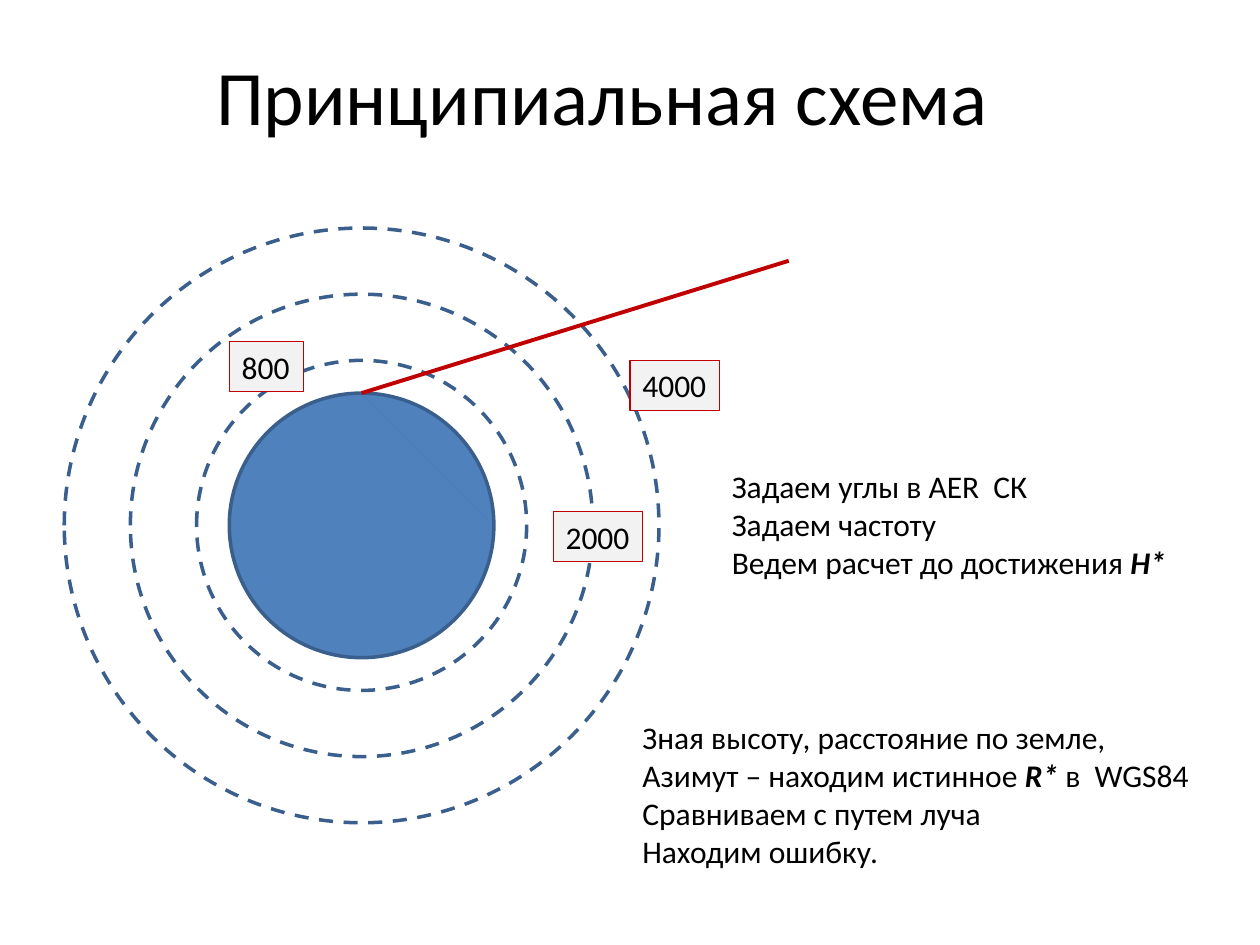
from dataclasses import dataclass

from lxml.etree import SubElement
from pptx import Presentation
from pptx.dml.color import RGBColor
from pptx.enum.dml import MSO_LINE
from pptx.enum.shapes import MSO_CONNECTOR, MSO_SHAPE
from pptx.enum.text import MSO_ANCHOR, MSO_AUTO_SIZE, PP_ALIGN
from pptx.oxml.ns import qn
from pptx.util import Inches, Pt

COLORS = {
    "text": "000000",
    "earth": "4F81BD",
    "orbit": "3A5F8C",
    "chord": "4B7EBC",
    "ray": "C00000",
    "label": "F2F2F2",
}
FONT = "Calibri"
CENTER_X, CENTER_Y = 2.87, 4.17
EARTH_RADIUS = 1.05
ORBIT_RADII = (1.31, 1.835, 2.36)


@dataclass
class HeightLabel:
    text: str
    left: float
    top: float
    width: float


@dataclass
class Ray:
    end_x: float
    end_y: float
    color: str
    weight: float


@dataclass
class Note:
    lines: list[str]
    left: float
    top: float
    width: float
    height: float


HEIGHT_LABELS = [
    HeightLabel("4000", 5, 2.86, 0.71),
    HeightLabel("2000", 4.39, 4.06, 0.71),
    HeightLabel("800", 1.82, 2.71, 0.59),
]
RAYS = [Ray(3.87, 4.12, "chord", 0.75), Ray(6.26, 2.07, "ray", 2.25)]
# Text between bars is bold italic
NOTES = [
    Note(["Задаем углы в AER  СК", "Задаем частоту",
          "Ведем расчет до достижения |H*|"], 5.71, 3.66, 3.69, 1.01),
    Note(["Зная высоту, расстояние по земле,",
          "Азимут – находим истинное |R*| в  WGS84",
          "Сравниваем с путем луча", "Находим ошибку."], 5, 5.65, 4.59, 1.31),
]


def rgb(name: str) -> RGBColor:
    return RGBColor.from_string(COLORS[name])


def write_text(frame, lines: list[str], *, size: float = 18, align=PP_ALIGN.LEFT,
               anchor=MSO_ANCHOR.TOP, wrap: bool = False,
               fit=MSO_AUTO_SIZE.SHAPE_TO_FIT_TEXT) -> None:
    frame.word_wrap = wrap
    frame.auto_size = fit
    frame.vertical_anchor = anchor
    for number, line in enumerate(lines):
        paragraph = frame.paragraphs[0] if number == 0 else frame.add_paragraph()
        paragraph.alignment = align
        for position, piece in enumerate(line.split("|")):
            if not piece:
                continue
            run = paragraph.add_run()
            run.text = piece
            run.font.name = FONT
            run.font.size = Pt(size)
            run.font.color.rgb = rgb("text")
            run.font.bold = run.font.italic = position % 2 == 1


def add_circle(shapes, radius: float, *, filled: bool = False) -> None:
    circle = shapes.add_shape(
        MSO_SHAPE.OVAL, Inches(CENTER_X - radius), Inches(CENTER_Y - radius),
        Inches(2 * radius), Inches(2 * radius))
    circle.shadow.inherit = False
    circle.line.color.rgb = rgb("orbit")
    circle.line.width = Pt(2)
    if filled:
        circle.fill.solid()
        circle.fill.fore_color.rgb = rgb("earth")
    else:
        circle.fill.background()
        circle.line.dash_style = MSO_LINE.DASH


def add_ray(shapes, ray: Ray) -> None:
    line = shapes.add_connector(
        MSO_CONNECTOR.STRAIGHT, Inches(CENTER_X), Inches(CENTER_Y - EARTH_RADIUS),
        Inches(ray.end_x), Inches(ray.end_y))
    line.line.color.rgb = rgb(ray.color)
    line.line.width = Pt(ray.weight)
    SubElement(line._element.spPr, qn("a:effectLst"))


def add_height_label(shapes, label: HeightLabel) -> None:
    box = shapes.add_shape(MSO_SHAPE.RECTANGLE, Inches(label.left),
                           Inches(label.top), Inches(label.width), Inches(0.4))
    box.shadow.inherit = False
    box.fill.solid()
    box.fill.fore_color.rgb = rgb("label")
    box.line.color.rgb = rgb("ray")
    box.line.width = Pt(0.75)
    write_text(box.text_frame, [label.text])


def add_note(shapes, note: Note) -> None:
    box = shapes.add_textbox(Inches(note.left), Inches(note.top),
                             Inches(note.width), Inches(note.height))
    write_text(box.text_frame, note.lines)


def main() -> None:
    deck = Presentation()
    deck.slide_width, deck.slide_height = Inches(10), Inches(7.5)
    slide = deck.slides.add_slide(deck.slide_layouts[5])
    shapes = slide.shapes

    # Title
    title = shapes.title
    title.left, title.top = Inches(0.35), Inches(0.13)
    title.width, title.height = Inches(9), Inches(1.25)
    write_text(title.text_frame, ["Принципиальная схема "], size=44,
               align=PP_ALIGN.CENTER, anchor=MSO_ANCHOR.MIDDLE, wrap=True,
               fit=MSO_AUTO_SIZE.NONE)

    # Earth and the heights around it
    add_circle(shapes, EARTH_RADIUS, filled=True)
    for radius in ORBIT_RADII:
        add_circle(shapes, radius)

    # Rays from the top of the Earth
    for ray in RAYS:
        add_ray(shapes, ray)

    # Height labels and notes
    for label in HEIGHT_LABELS:
        add_height_label(shapes, label)
    for note in NOTES:
        add_note(shapes, note)

    deck.save("out.pptx")


if __name__ == "__main__":
    main()
